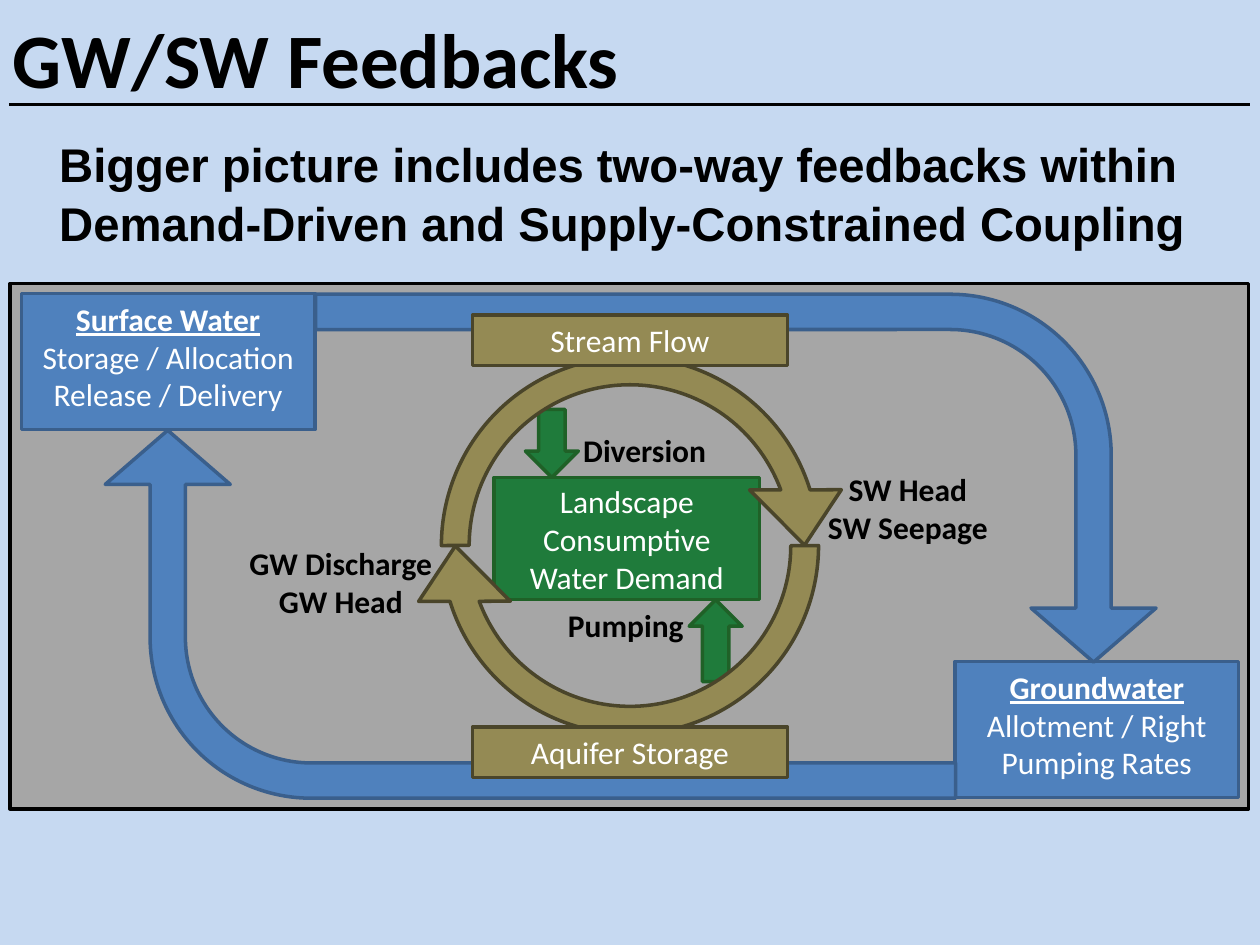
from pptx import Presentation
from pptx.util import Inches, Pt
from pptx.dml.color import RGBColor
from pptx.enum.shapes import MSO_SHAPE as SHAPE, MSO_CONNECTOR
from pptx.enum.text import PP_ALIGN as AL, MSO_ANCHOR as ANC
from pptx.oxml.ns import qn
from lxml import etree

COLORS = {
    "bg": "C6D9F1", "black": "000000", "white": "FFFFFF", "panel": "A6A6A6",
    "blue": "4F81BD", "blue_line": "3A5F8C",
    "green": "1F7B3B", "green_line": "1F6127",
    "olive": "948A54", "olive_line": "4A452A",
}


def add_shape(kind, box, fill, line, rot=0, adj=()):
    sp = s.shapes.add_shape(kind, *[Inches(v) for v in box])
    sp.shadow.inherit = False
    sp.fill.solid()
    sp.fill.fore_color.rgb = RGBColor.from_string(COLORS[fill])
    sp.line.color.rgb = RGBColor.from_string(COLORS[line])
    sp.line.width = Pt(2)
    sp.rotation = rot
    for i, v in enumerate(adj):
        sp.adjustments[i] = v
    return sp


def add_text(sp, lines, color="white", size=18, font="Calibri", bold=False,
             heading=False, align=AL.CENTER, anchor=ANC.MIDDLE):
    tf = sp.text_frame
    tf.word_wrap = True
    tf.vertical_anchor = anchor
    for i, text in enumerate(lines):
        p = tf.paragraphs[0] if i == 0 else tf.add_paragraph()
        p.alignment = align
        p.space_before = Pt(0)
        r = p.add_run()
        r.text = text
        r.font.name = font
        r.font.size = Pt(size)
        r.font.bold = bold or (heading and i == 0)
        r.font.underline = heading and i == 0
        r.font.color.rgb = RGBColor.from_string(COLORS[color])


prs = Presentation()
prs.slide_width = Inches(10)
prs.slide_height = Inches(7.5)
s = prs.slides.add_slide(prs.slide_layouts[1])
s.background.fill.solid()
s.background.fill.fore_color.rgb = RGBColor.from_string(COLORS["bg"])

title, body = s.shapes.title, s.placeholders[1]
for sp, top, height in [(title, 0, 0.92), (body, 1, 1.08)]:
    sp.left, sp.top = Inches(0), Inches(top)
    sp.width, sp.height = Inches(10), Inches(height)
add_text(title, ["GW/SW Feedbacks"], "black", 44, bold=True, align=AL.LEFT)

pPr = body.text_frame.paragraphs[0]._p.get_or_add_pPr()
pPr.set("marL", str(Inches(0.37)))
pPr.set("indent", "0")
etree.SubElement(pPr, qn("a:buNone"))
add_text(body, ["Bigger picture includes two-way feedbacks within "
                "Demand-Driven and Supply-Constrained Coupling"],
         "black", 27, "Arial", bold=True, align=AL.LEFT, anchor=ANC.TOP)
body.text_frame.paragraphs[0].line_spacing = 1.05

rule = s.shapes.add_connector(MSO_CONNECTOR.STRAIGHT, Inches(0.07), Inches(0.83),
                              Inches(9.92), Inches(0.83))
rule.line.color.rgb = RGBColor.from_string(COLORS["black"])
rule.line.width = Pt(2)
etree.SubElement(rule._element.spPr, qn("a:effectLst"))

add_shape(SHAPE.RECTANGLE, (0.08, 2.25, 9.83, 4.17), "panel", "black")

for box, lines in [
    ((0.17, 2.33, 2.33, 1.08),
     ["Surface Water", "Storage / Allocation", "Release / Delivery"]),
    ((7.58, 5.25, 2.25, 1.08),
     ["Groundwater", "Allotment / Right Pumping Rates"]),
]:
    sp = add_shape(SHAPE.RECTANGLE, box, "blue", "blue_line")
    add_text(sp, lines, heading=True, anchor=ANC.TOP)

for box, rot in [((4.38, 0.46, 2.92, 6.67), 90), ((2.75, 1.5, 2.92, 6.75), 270)]:
    add_shape(SHAPE.BENT_ARROW, box, "blue", "blue_line", rot,
              (0.096, 0.17, 0.147, 0.438))

demand = add_shape(SHAPE.RECTANGLE, (3.92, 3.79, 2.11, 0.97), "green", "green_line")
add_text(demand, ["Landscape Consumptive Water Demand"])
for box, rot in [((4.17, 3.25, 0.42, 0.54), 0), ((5.47, 4.76, 0.42, 0.65), 180)]:
    add_shape(SHAPE.DOWN_ARROW, box, "green", "green_line", rot)

for rot in (180, 0):
    add_shape(SHAPE.CIRCULAR_ARROW, (3.25, 2.58, 3.5, 3.5), "olive", "olive_line",
              rot, (0.063, 11.094, 204.842, 108, 0.104))

for top, text in [(2.5, "Stream Flow"), (5.77, "Aquifer Storage")]:
    sp = add_shape(SHAPE.RECTANGLE, (3.75, top, 2.5, 0.4), "olive", "olive_line")
    add_text(sp, [text])

for box, lines, align in [
    ((4.53, 3.37, 1.75, 0.4), ["Diversion"], AL.LEFT),
    ((4.41, 4.76, 1.4, 0.4), ["Pumping"], AL.LEFT),
    ((1.83, 4.17, 1.75, 0.9), ["GW Discharge", "GW Head"], AL.CENTER),
    ((6.33, 3.58, 1.75, 0.9), ["SW Head", "SW Seepage"], AL.CENTER),
]:
    sp = s.shapes.add_textbox(*[Inches(v) for v in box])
    add_text(sp, lines, "black", bold=True, align=align)

prs.save("out.pptx")
